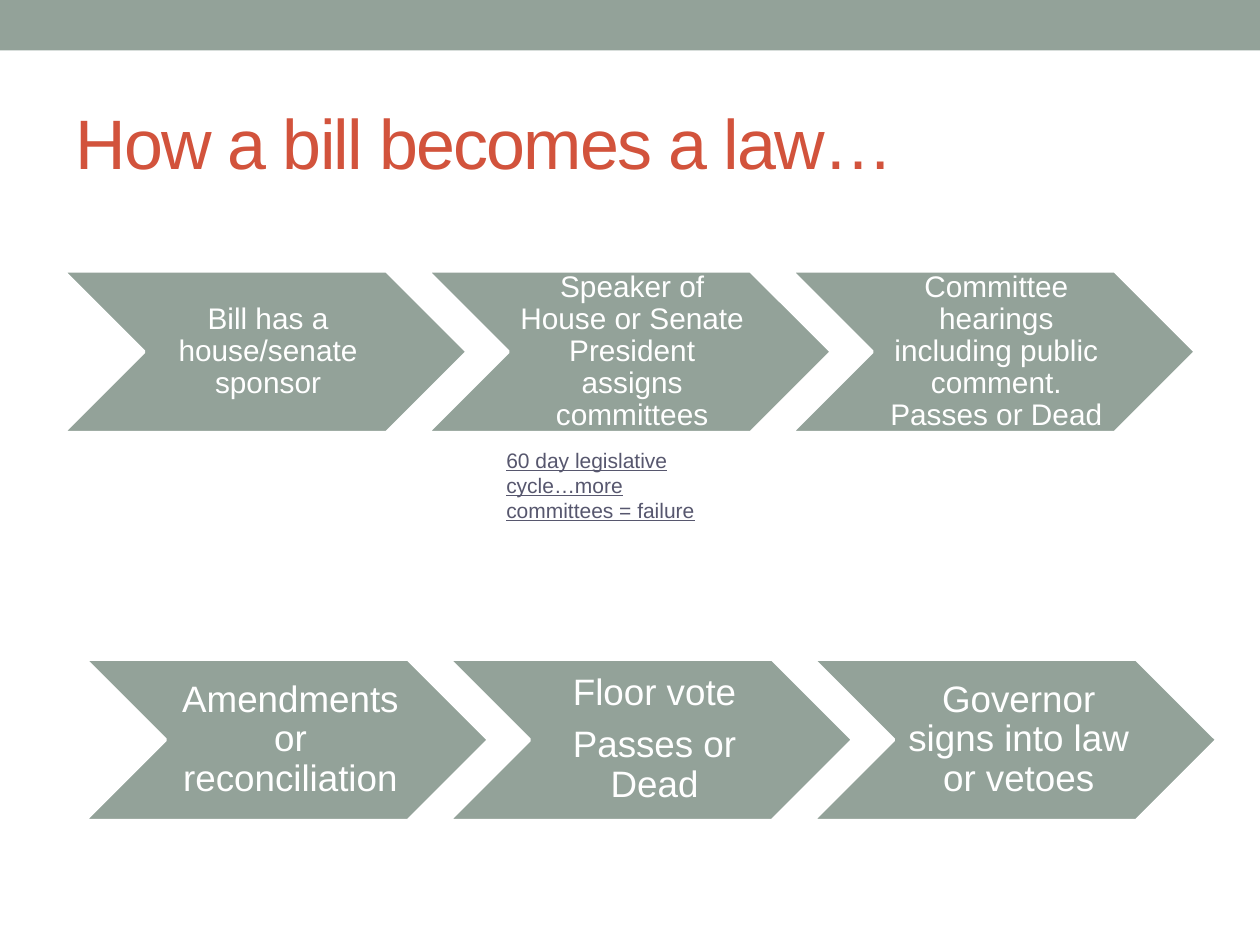
from pptx import Presentation
from pptx.dml.color import RGBColor
from pptx.enum.shapes import MSO_SHAPE
from pptx.enum.text import MSO_ANCHOR, PP_ALIGN
from pptx.util import Inches, Pt

SAGE, WHITE, RUST, SLATE = "93A299", "FFFFFF", "D2533C", "57576E"


def rgb(value):
    return RGBColor.from_string(value)


def box(left, top, width, height):
    return [Inches(v) for v in (left, top, width, height)]


def add_run(p, text, size, color):
    r = p.add_run()
    r.text = text
    r.font.name = "Arial"
    r.font.size = Pt(size)
    r.font.color.rgb = rgb(color)
    return r


def add_shape(s, kind, left, top, width, height):
    sp = s.shapes.add_shape(kind, *box(left, top, width, height))
    sp.shadow.inherit = False
    sp.fill.solid()
    sp.fill.fore_color.rgb = rgb(SAGE)
    return sp


def add_band(s, left, top, width, height):
    band = add_shape(s, MSO_SHAPE.RECTANGLE, left, top, width, height)
    band.line.fill.background()


def set_title(s, text, left, top, width, height):
    title = s.shapes.title
    title.left, title.top, title.width, title.height = box(left, top, width, height)
    tf = title.text_frame
    tf.vertical_anchor = MSO_ANCHOR.MIDDLE
    p = tf.paragraphs[0]
    p.alignment = PP_ALIGN.LEFT
    r = add_run(p, text, 40, RUST)
    r.font._element.set("spc", "-100")


def add_step(s, paragraphs, size, inset, left, top, width, height):
    chevron = add_shape(s, MSO_SHAPE.CHEVRON, left, top, width, height)
    chevron.line.color.rgb = rgb(WHITE)
    chevron.line.width = Pt(2.08)

    label = s.shapes.add_textbox(*box(left + height / 2, top, width - height, height))
    tf = label.text_frame
    tf.word_wrap = True
    tf.vertical_anchor = MSO_ANCHOR.MIDDLE
    tf.margin_left = Inches(3 * inset)
    tf.margin_top = tf.margin_right = tf.margin_bottom = Inches(inset)
    for i, text in enumerate(paragraphs):
        p = tf.paragraphs[0]
        if i:
            p = tf.add_paragraph()
            p.space_before = Pt(round(0.35 * size))
        p.alignment = PP_ALIGN.CENTER
        p.line_spacing = 0.9
        add_run(p, text, size, WHITE)


def add_process(s, steps, size, inset, left, top, width, height):
    step_width = 2.5 * height
    pitch = (width - step_width) / (len(steps) - 1)
    for i, paragraphs in enumerate(steps):
        add_step(s, paragraphs, size, inset, left + i * pitch, top, step_width, height)


def add_note(s, text, left, top, width, height):
    tf = s.shapes.add_textbox(*box(left, top, width, height)).text_frame
    tf.word_wrap = True
    r = add_run(tf.paragraphs[0], text, 12, SLATE)
    r.font.underline = True


def main():
    prs = Presentation()
    prs.slide_width, prs.slide_height = Inches(10), Inches(7.5)
    s = prs.slides.add_slide(prs.slide_layouts[5])

    add_band(s, 0, 0, 10, 0.4)
    set_title(s, "How a bill becomes a law…", 0.5, 0.58, 9, 1.08)
    add_process(s, [
        ["Bill has a house/senate sponsor"],
        ["Speaker of House or Senate President assigns committees"],
        ["Committee hearings including public comment. Passes or Dead"],
    ], 17, 0.023, 0.5, 2.15, 8.99, 1.284)
    add_process(s, [
        ["Amendments or reconciliation"],
        ["Floor vote", "Passes or Dead"],
        ["Governor signs into law or vetoes"],
    ], 21, 0.03, 0.67, 5.23, 8.99, 1.284)
    add_note(s, "60 day legislative cycle…more committees = failure", 3.92, 3.5, 2, 0.71)

    prs.save("out.pptx")


if __name__ == "__main__":
    main()
